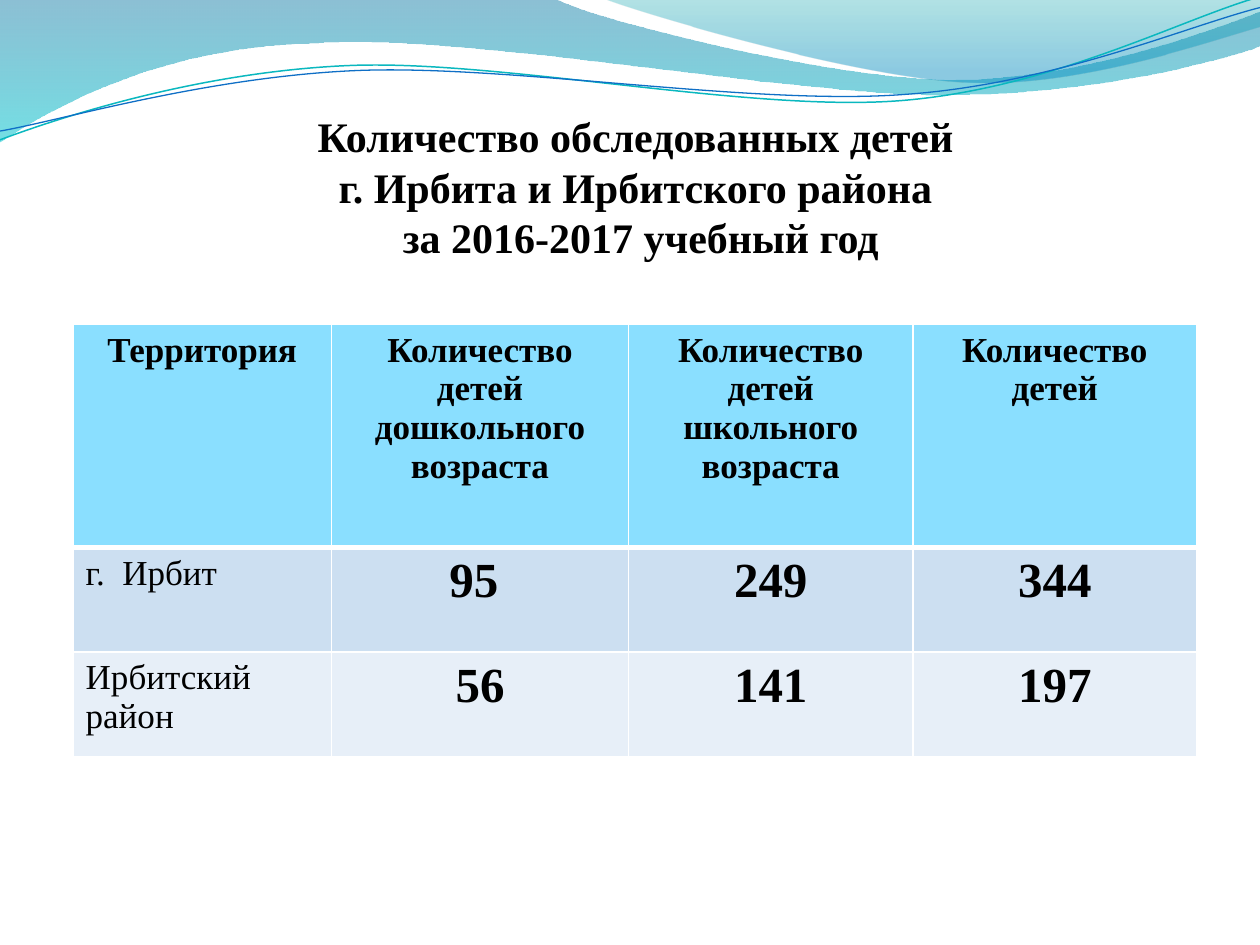
import math
from dataclasses import dataclass, field

from lxml import etree
from pptx import Presentation
from pptx.dml.color import RGBColor
from pptx.enum.text import MSO_ANCHOR, PP_ALIGN
from pptx.oxml.ns import qn
from pptx.util import Inches, Pt

CENTER, LEFT = PP_ALIGN.CENTER, PP_ALIGN.LEFT
TOP = MSO_ANCHOR.TOP
TITLE_ONLY = 5
GRID_COLUMNS, GRID_ROWS = 100, 75
STRAND_TILT = 2.7

COLORS = {
    "text": "000000", "border": "FFFFFF", "header": "8ADFFF",
    "odd_row": "CCDFF1", "even_row": "E7EFF8",
    "deep_blue": "0074A1", "aqua": "00C6CF", "teal": "00A1A9",
    "sky": "008BBF", "teal_line": "0AB8BF", "blue_line": "0F6FC6",
}

TITLE_LINES = [
    "Количество обследованных детей ",
    "г. Ирбита и Ирбитского района ",
    "за 2016-2017 учебный год",
]
CHILDREN_COUNTS = [
    ["Территория", "Количество детей дошкольного возраста",
     "Количество детей школьного возраста", "Количество детей"],
    ["г.  Ирбит", "95 ", "249", "344"],
    ["Ирбитский район", "56", "141", "197"],
]

WIDE_WAVE = [
    [(0, 0)], [(44, -0.1)], [(47.6, 1.7), (66.4, 6.3), (75.8, 6.3)],
    [(85.3, 6.3), (95.8, 2.6), (100, 0.9)], [(100.1, 3.6)],
    [(98.3, 4.4), (87, 7.6), (74.6, 7.5)], [(62.2, 7.5), (38.2, 2.8), (25.7, 3.4)],
    [(12.9, 3.6), (4.6, 8.3), (-0.1, 11.3)],
]
RIGHT_WAVE = [
    [(47.9, -0.1)], [(50.9, 1.1), (68.2, 6.2), (76.9, 6.5)],
    [(85.6, 6.9), (96.1, 3.2), (100, 2.1)], [(100, 0)],
]
TEAL_STRAND = [
    [(0, 11.1)], [(4.8, 9.3), (15.8, 5.7), (27.7, 5.2)],
    [(39.5, 4.7), (59.3, 8.9), (71.3, 8)], [(83.3, 7.1), (93.8, 1.5), (99.8, -0.2)],
]
BLUE_STRAND = [
    [(0, 10.4)], [(4.7, 9.6), (16.4, 6.1), (28.3, 5.6)],
    [(40.3, 5.1), (59.7, 8.4), (71.7, 7.5)], [(83.6, 6.7), (94.1, 2.1), (100, 0.6)],
]


def turn(segments, center, degrees):
    """Return the segments turned clockwise about a center."""
    sine, cosine = math.sin(math.radians(degrees)), math.cos(math.radians(degrees))
    middle_x, middle_y = center
    return [[(middle_x + (x - middle_x) * cosine - (y - middle_y) * sine,
              middle_y + (x - middle_x) * sine + (y - middle_y) * cosine)
             for x, y in segment] for segment in segments]


@dataclass
class Deck:
    """Holds the style and the current slide, and draws elements on a grid."""
    presentation: object = field(default_factory=Presentation)
    font: str = "Times New Roman"

    def __post_init__(self):
        """Set the slide size and add the slide."""
        self.presentation.slide_width = Inches(10)
        self.presentation.slide_height = Inches(7.5)
        layout = self.presentation.slide_layouts[TITLE_ONLY]
        self.slide = self.presentation.slides.add_slide(layout)

    def x(self, columns):
        """Return the length of a number of grid columns."""
        return round(self.presentation.slide_width * columns / GRID_COLUMNS)

    def y(self, rows):
        """Return the length of a number of grid rows."""
        return round(self.presentation.slide_height * rows / GRID_ROWS)

    def format(self, paragraph, size, bold, align):
        """Style a paragraph and its runs."""
        paragraph.alignment = align
        for run in paragraph.runs:
            run.font.name = self.font
            run.font.size = Pt(size)
            run.font.bold = bold
            run.font.color.rgb = RGBColor.from_string(COLORS["text"])

    def title(self, lines, left, top, width, height):
        """Place the slide title, one paragraph per line."""
        heading = self.slide.shapes.title
        heading.left, heading.top = self.x(left), self.y(top)
        heading.width, heading.height = self.x(width), self.y(height)
        frame = heading.text_frame
        frame.vertical_anchor = TOP
        frame.text = "\n".join(lines)
        for paragraph in frame.paragraphs:
            paragraph.space_before = Pt(0)
            self.format(paragraph, 24, True, CENTER)

    def outline(self, segments, close):
        """Draw an outline whose three-point segments are cubic curves."""
        points = [(self.x(column), self.y(row)) for segment in segments for column, row in segment]
        builder = self.slide.shapes.build_freeform(*points[0])
        builder.add_line_segments(points[1:], close=close)
        shape = builder.convert_to_shape()
        shape.shadow.inherit = False
        strokes = iter(list(shape.element.spPr.iter(qn("a:lnTo"))))
        for segment in segments[1:]:
            first, *others = [next(strokes) for _ in segment]
            if others:
                first.tag = qn("a:cubicBezTo")
            for stroke in others:
                first.append(stroke[0])
                stroke.getparent().remove(stroke)
        return shape

    def wave(self, segments, stops):
        """Draw a filled wave with a translucent downward gradient."""
        shape = self.outline(segments, True)
        shape.line.fill.background()
        shape.fill.gradient()
        shape.fill.gradient_angle = 270
        for stop, (position, color, _) in zip(shape.fill.gradient_stops, stops):
            stop.position = position
            stop.color.rgb = RGBColor.from_string(COLORS[color])
        tints = shape.element.spPr.iter(qn("a:srgbClr"))
        for tint, (_, _, opacity) in zip(list(tints), stops):
            etree.SubElement(tint, qn("a:alpha"), val=str(opacity * 1000))

    def strand(self, segments, center, color, width):
        """Draw a tilted open curve."""
        shape = self.outline(turn(segments, center, STRAND_TILT), False)
        shape.rotation = -STRAND_TILT
        shape.fill.background()
        shape.line.color.rgb = RGBColor.from_string(COLORS[color])
        shape.line.width = Pt(width)

    def borders(self, cell, top, bottom):
        """Give a cell its border lines."""
        properties = cell._tc.get_or_add_tcPr()
        for side, width in (("L", 1), ("R", 1), ("T", top), ("B", bottom)):
            edge = etree.SubElement(properties, qn(f"a:ln{side}"), w=str(Pt(width)))
            paint = etree.SubElement(edge, qn("a:solidFill"))
            etree.SubElement(paint, qn("a:srgbClr"), val=COLORS["border"])

    def table(self, rows, left, top, widths, heights):
        """Draw a table with a header row and a label column."""
        frame = self.slide.shapes.add_table(
            len(rows), len(widths), self.x(left), self.y(top),
            self.x(sum(widths)), self.y(sum(heights)))
        grid = frame.table
        for column, width in zip(grid.columns, widths):
            column.width = self.x(width)
        for row, height in zip(grid.rows, heights):
            row.height = self.y(height)
        fills = ("header", "odd_row", "even_row")
        for r, texts in enumerate(rows):
            for c, text in enumerate(texts):
                cell = grid.cell(r, c)
                header, label = r == 0, r > 0 and c == 0
                self.borders(cell, 3 if r == 1 else 1, 3 if header else 1)
                cell.fill.solid()
                cell.fill.fore_color.rgb = RGBColor.from_string(COLORS[fills[r]])
                cell.text_frame.text = text
                self.format(cell.text_frame.paragraphs[0], 20 if header or label else 28,
                            not label, LEFT if label else CENTER)


def main():
    """Build the slide and save it."""
    deck = Deck()
    deck.wave(WIDE_WAVE, [(0, "deep_blue", 45), (1, "aqua", 55)])
    deck.wave(RIGHT_WAVE, [(0, "teal", 30), (0.8, "sky", 45)])
    deck.strand(TEAL_STRAND, (49.9, 5.75), "teal_line", 0.85)
    deck.strand(BLUE_STRAND, (49.95, 5.9), "blue_line", 0.75)
    deck.table(CHILDREN_COUNTS, 5.8, 25.75, (20.5, 23.6, 22.55, 22.55), (17.7, 8.3, 8.3))
    deck.title(TITLE_LINES, 9.2, 8.3, 83.3, 13.1)
    deck.presentation.save("out.pptx")


if __name__ == "__main__":
    main()
